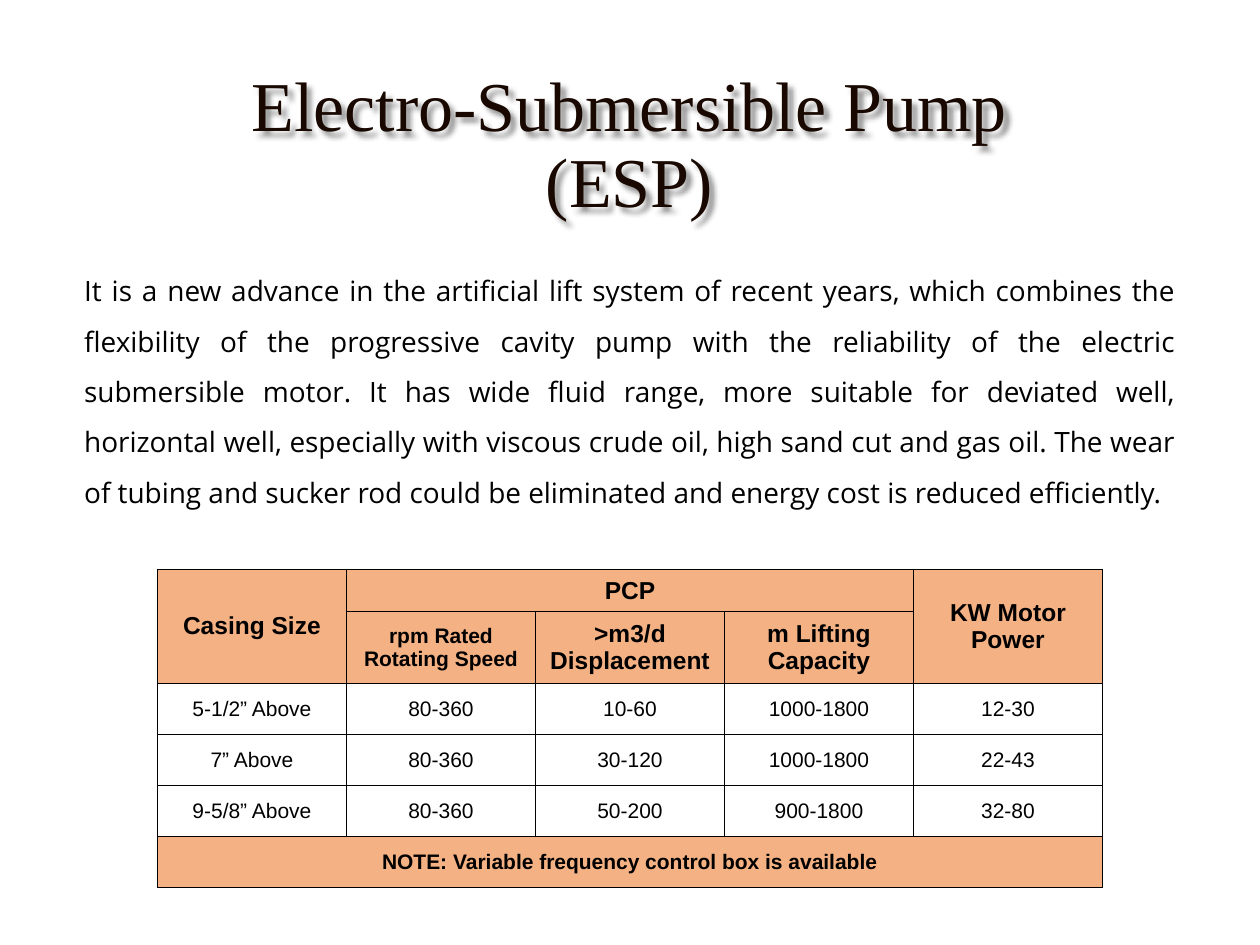
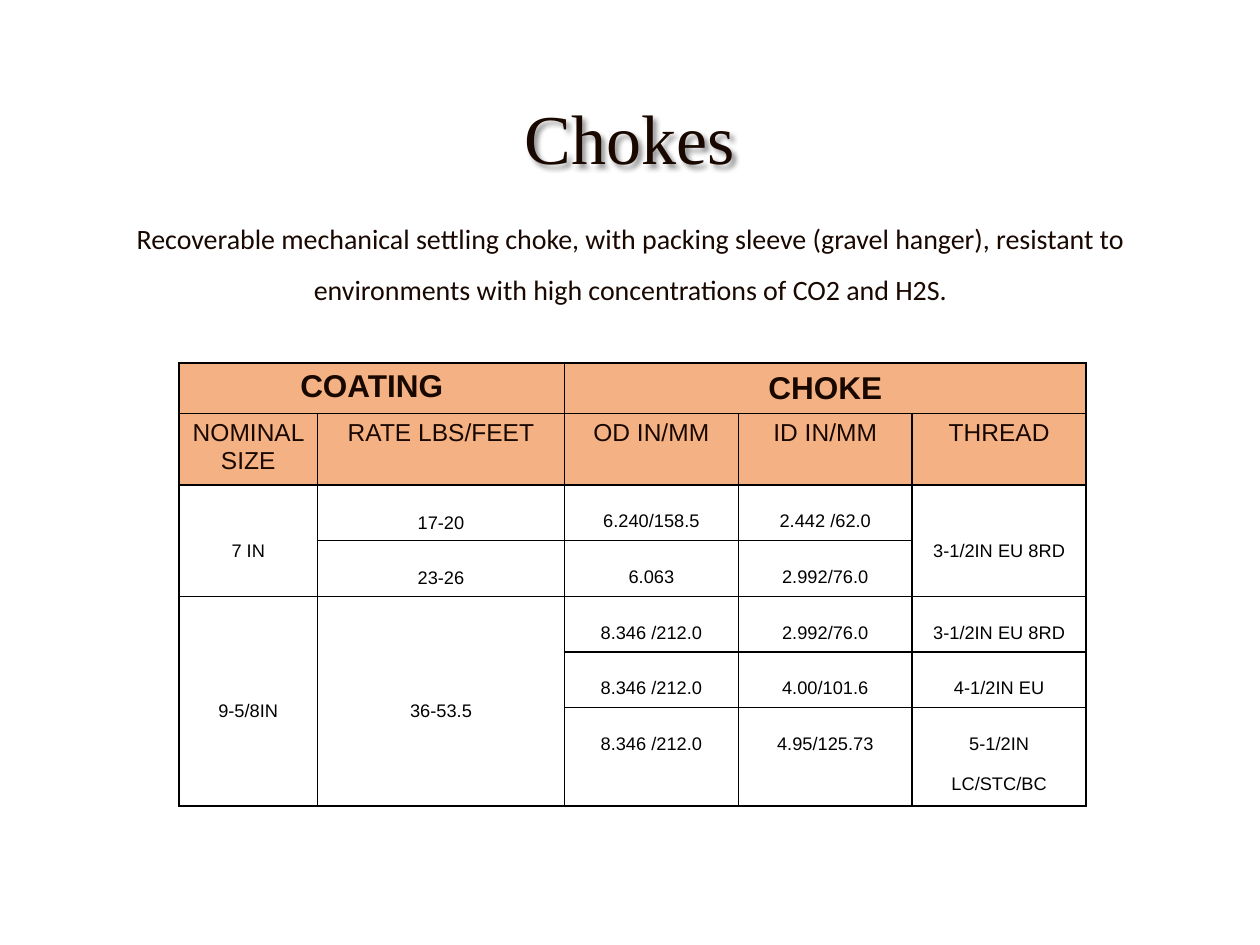
from dataclasses import dataclass
from typing import Optional

from lxml import etree
from pptx import Presentation
from pptx import util as u
from pptx.dml.color import RGBColor
from pptx.enum import text
from pptx.oxml import ns, parse_xml

ALIGN = text.PP_ALIGN
ANCHOR = text.MSO_ANCHOR


@dataclass(frozen=True)
class Theme:
    ink: str = "190800"
    black: str = "000000"
    header: str = "F4B183"
    title_font: str = "Times New Roman"
    table_font: str = "Arial"
    title_size: int = 40
    body_size: int = 16
    large: int = 18
    medium: int = 14
    small: int = 12
    border: int = 1


THEME = Theme()


@dataclass(frozen=True)
class CellStyle:
    size: int
    color: str = THEME.black
    bold: bool = False
    fill: Optional[str] = None
    anchor: ANCHOR = ANCHOR.MIDDLE
    subscript: bool = False


class Deck:
    """Holds the theme and the current slide."""

    def __init__(self, theme):
        self.theme = theme
        self.prs = Presentation()
        self.prs.slide_width, self.prs.slide_height = u.Inches(10), u.Inches(7.5)
        self.slide = None

    def new_slide(self):
        self.slide = self.prs.slides.add_slide(self.prs.slide_layouts[6])

    def set_font(self, paragraph, name, size, color, bold=False):
        font = paragraph.font
        font.name, font.size, font.bold = name, u.Pt(size), bold
        font.color.rgb = RGBColor.from_string(color)

    def text_box(self, box, words, font, size, color, align, spacing, wrap=True):
        shape = self.slide.shapes.add_textbox(*map(u.Inches, box))
        frame = shape.text_frame
        frame.word_wrap = wrap
        frame.auto_size = text.MSO_AUTO_SIZE.SHAPE_TO_FIT_TEXT
        paragraph = frame.paragraphs[0]
        paragraph.text = words
        paragraph.alignment, paragraph.line_spacing = align, spacing
        self.set_font(paragraph, font, size, color)
        return shape

    def title(self, box, words):
        t = self.theme
        shape = self.text_box(box, words, t.title_font, t.title_size, t.ink,
                              ALIGN.CENTER, 0.9, wrap=False)
        shape.text_frame.vertical_anchor = ANCHOR.MIDDLE
        # Soft shadow behind the letters
        shape._element.spPr.append(parse_xml(
            f'<a:effectLst {ns.nsdecls("a")}>'
            '<a:outerShdw blurRad="38100" dist="38100" dir="2700000" algn="tl">'
            '<a:srgbClr val="000000"><a:alpha val="43000"/></a:srgbClr>'
            '</a:outerShdw></a:effectLst>'))

    def body(self, box, words, font, color, align):
        self.text_box(box, words, font, self.theme.body_size, color, align, 1.5)

    def table(self, left, top, widths, rows, merges, special=None):
        """rows: (height, style, texts); special: styles of single cells."""
        special = special or {}
        heights = [height for height, _, _ in rows]
        frame = self.slide.shapes.add_table(
            len(rows), len(widths), u.Inches(left), u.Inches(top),
            u.Inches(sum(widths)), u.Inches(sum(heights)))
        table = frame.table
        table.first_row = table.horz_banding = False
        for column, width in zip(table.columns, widths):
            column.width = u.Inches(width)
        for r, (height, row_style, words) in enumerate(rows):
            table.rows[r].height = u.Inches(height)
            for c, word in enumerate(words):
                self.fill_cell(table.cell(r, c), word, special.get((r, c), row_style))
        for first, last in merges:
            table.cell(*first).merge(table.cell(*last))

    def fill_cell(self, cell, words, style):
        self.border(cell)
        cell.vertical_anchor = style.anchor
        if style.fill:
            cell.fill.solid()
            cell.fill.fore_color.rgb = RGBColor.from_string(style.fill)
        else:
            cell.fill.background()
        paragraph = cell.text_frame.paragraphs[0]
        paragraph.text = words
        paragraph.alignment = ALIGN.CENTER
        self.set_font(paragraph, self.theme.table_font, style.size, style.color, style.bold)
        if style.subscript:
            for run in paragraph.runs:
                run._r.get_or_add_rPr().set("baseline", "-25000")

    def border(self, cell):
        properties = cell._tc.get_or_add_tcPr()
        for side in ("lnL", "lnR", "lnT", "lnB"):
            line = etree.SubElement(properties, ns.qn(f"a:{side}"),
                                    w=str(u.Pt(self.theme.border)))
            fill = etree.SubElement(line, ns.qn("a:solidFill"))
            etree.SubElement(fill, ns.qn("a:srgbClr"), val=self.theme.black)


def pump_slide(deck):
    t = deck.theme
    deck.new_slide()
    deck.title((1.89, 0.51, 6.21, 1.31), "Electro-Submersible Pump\v(ESP)")
    deck.body(
        (0.57, 1.99, 8.86, 2.08),
        "It is a new advance in the artificial lift system of recent years, which "
        "combines the flexibility of the progressive cavity pump with the reliability "
        "of the electric submersible motor. It has wide fluid range, more suitable for "
        "deviated well, horizontal well, especially with viscous crude oil, high sand "
        "cut and gas oil. The wear of tubing and sucker rod could be eliminated and "
        "energy cost is reduced efficiently.",
        "Open Sans", t.black, ALIGN.JUSTIFY)

    # Pump sizes
    head = CellStyle(t.medium, bold=True, fill=t.header)
    note = CellStyle(t.small, bold=True, fill=t.header)
    value = CellStyle(t.small)
    rows = [
        (0.33, head, ["Casing Size", "PCP", "", "", "KW Motor Power"]),
        (0.57, head, ["", "rpm Rated Rotating Speed", ">m3/d Displacement",
                      "m Lifting Capacity", ""]),
        (0.405, value, ["5-1/2” Above", "80-360", "10-60", "1000-1800", "12-30"]),
        (0.405, value, ["7” Above", "80-360", "30-120", "1000-1800", "22-43"]),
        (0.405, value, ["9-5/8” Above", "80-360", "50-200", "900-1800", "32-80"]),
        (0.405, note, ["NOTE: Variable frequency control box is available",
                       "", "", "", ""]),
    ]
    merges = [((0, 0), (1, 0)), ((0, 1), (0, 3)), ((0, 4), (1, 4)), ((5, 0), (5, 4))]
    deck.table(1.25, 4.52, [1.5] * 5, rows, merges, {(1, 1): note})


def choke_slide(deck):
    t = deck.theme
    deck.new_slide()
    deck.title((4.05, 0.77, 1.89, 0.71), "Chokes")

    # Choke sizes by coating
    group = CellStyle(t.large, t.ink, bold=True, fill=t.header)
    coating = CellStyle(t.large, t.ink, bold=True, fill=t.header, anchor=ANCHOR.TOP)
    head = CellStyle(t.medium, t.ink, fill=t.header, anchor=ANCHOR.TOP)
    value = CellStyle(t.large, anchor=ANCHOR.TOP, subscript=True)
    centred = CellStyle(t.large, subscript=True)
    rows = [
        (0.4, group, ["COATING", "", "CHOKE", "", ""]),
        (0.57, head, ["NOMINAL SIZE", "RATE LBS/FEET", "OD IN/MM", "ID IN/MM", "THREAD"]),
        (0.44, value, ["7 IN", "17-20", "6.240/158.5", "2.442 /62.0", "3-1/2IN EU 8RD"]),
        (0.44, value, ["", "23-26", "6.063", "2.992/76.0", ""]),
        (0.44, value, ["9-5/8IN", "36-53.5", "8.346 /212.0", "2.992/76.0",
                       "3-1/2IN EU 8RD"]),
        (0.44, value, ["", "", "8.346 /212.0", "4.00/101.6", "4-1/2IN EU"]),
        (0.78, value, ["", "", "8.346 /212.0", "4.95/125.73", "5-1/2IN LC/STC/BC"]),
    ]
    merges = [((0, 0), (0, 1)), ((0, 2), (0, 4)), ((2, 0), (3, 0)),
              ((2, 4), (3, 4)), ((4, 0), (6, 0)), ((4, 1), (6, 1))]
    middle = [(2, 0), (2, 1), (2, 4), (3, 1), (4, 0), (4, 1)]
    deck.table(1.42, 2.88, [1.1, 1.96] + [1.38] * 3, rows, merges,
               {(0, 0): coating, **dict.fromkeys(middle, centred)})

    deck.body(
        (0.46, 1.58, 9.09, 0.87),
        "Recoverable mechanical settling choke, with packing sleeve (gravel hanger), "
        "resistant to environments with high concentrations of CO2 and H2S.",
        "Calibri", t.ink, ALIGN.CENTER)


def main():
    deck = Deck(THEME)
    pump_slide(deck)
    choke_slide(deck)
    deck.prs.save("out.pptx")


if __name__ == "__main__":
    main()
